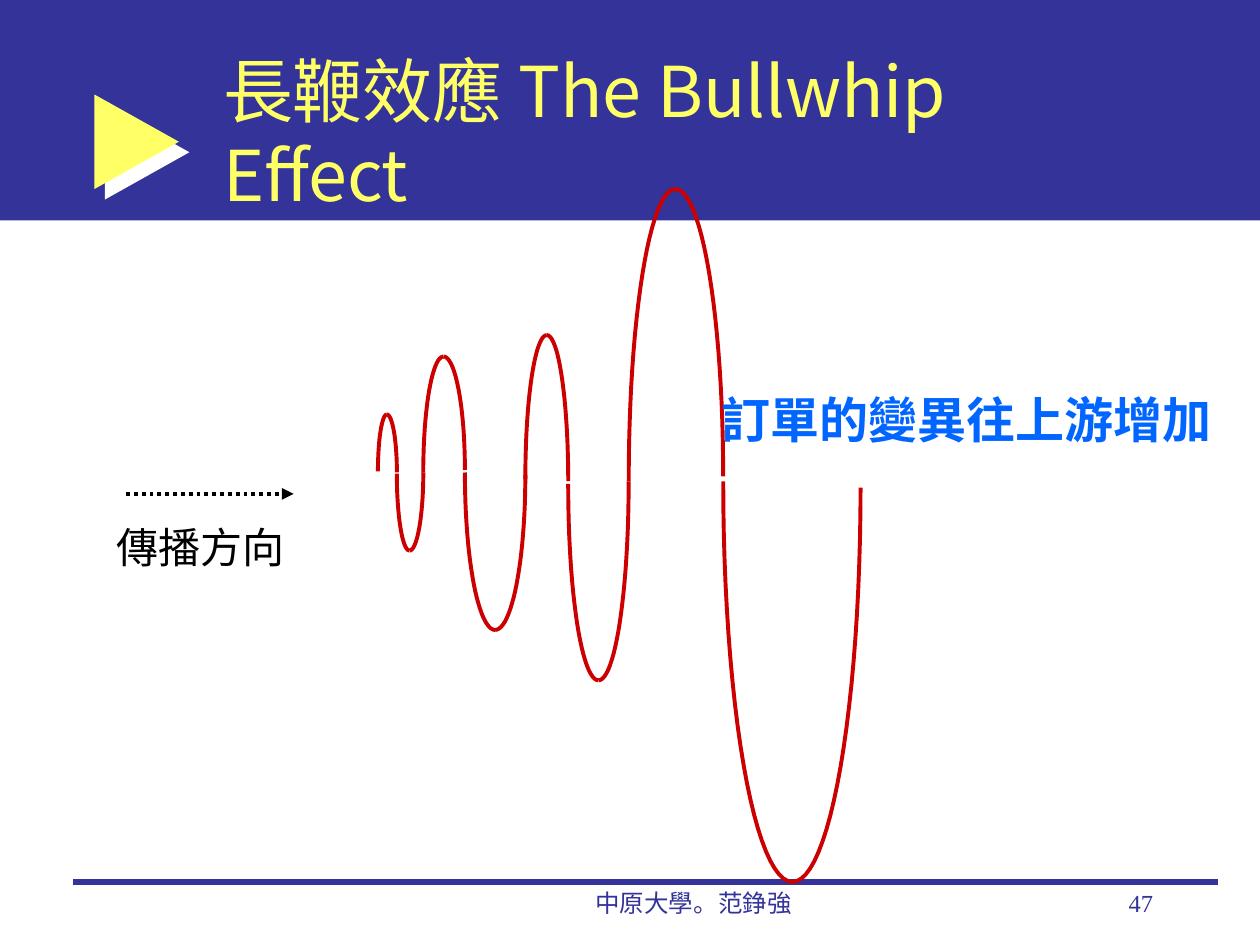
"""Build the bullwhip effect slide with its growing order wave."""
from math import cos, pi, sin

from lxml.etree import SubElement
from pptx import Presentation
from pptx.dml.color import RGBColor
from pptx.enum.dml import MSO_LINE
from pptx.enum.shapes import MSO_CONNECTOR, MSO_SHAPE
from pptx.enum.text import MSO_ANCHOR, MSO_AUTO_SIZE, PP_ALIGN
from pptx.oxml import parse_xml
from pptx.oxml.ns import nsdecls, qn
from pptx.util import Inches, Pt

color = RGBColor.from_string

NAVY, YELLOW, RED = "333399", "FFFF66", "CC0000"


def add_line(x1, x2, y, hex_color, width):
    line = slide.shapes.add_connector(
        MSO_CONNECTOR.STRAIGHT, Inches(x1), Inches(y), Inches(x2), Inches(y))
    line.line.color.rgb = color(hex_color)
    line.line.width = Pt(width)
    SubElement(line._element.spPr, qn("a:effectLst"))
    return line


prs = Presentation()
prs.slide_width, prs.slide_height = Inches(10), Inches(7.5)
slide = prs.slides.add_slide(prs.slide_layouts[5])

band = slide.shapes.add_shape(MSO_SHAPE.RECTANGLE, 0, 0, Inches(10), Inches(1.75))
marker = slide.shapes.add_shape(
    MSO_SHAPE.RIGHT_ARROW, Inches(0.75), Inches(0.75), Inches(0.67), Inches(0.75))
marker.adjustments[0], marker.adjustments[1] = 0.38, 1
for shape, fill in ((band, NAVY), (marker, YELLOW)):
    shape.fill.solid()
    shape.fill.fore_color.rgb = color(fill)
    shape.line.fill.background()
    shape.shadow.inherit = False
marker._element.spPr.find(qn("a:effectLst")).append(parse_xml(
    f'<a:outerShdw {nsdecls("a")} dist="{Pt(8.5)}" dir="2700000" algn="ctr" rotWithShape="0">'
    '<a:srgbClr val="FFFFFF"/></a:outerShdw>'))

add_line(0.58, 9.67, 7, NAVY, 3)

title = slide.shapes.title
slide.shapes._spTree.append(title._element)
title.left, title.top, title.width, title.height = (
    Inches(1.67), Inches(0.42), Inches(7.58), Inches(1.25))
title.text_frame.text = "長鞭效應 The Bullwhip Effect"
title.text_frame.auto_size = MSO_AUTO_SIZE.NONE
title.text_frame.vertical_anchor = MSO_ANCHOR.MIDDLE
title.text_frame.margin_right = Inches(0.4)
heading = title.text_frame.paragraphs[0]
heading.alignment = PP_ALIGN.LEFT
heading.font.name = "Noto Sans CJK SC"
heading.font.size = Pt(40)
heading.font.color.rgb = color(YELLOW)

# left, crest x, right, crest y, left base, right base
wave_groups = (
    ((3, 3.07, 3.15, 3.29, 3.74, 3.75),
     (3.15, 3.25, 3.36, 4.37, 3.76, 3.75),
     (3.36, 3.52, 3.69, 2.83, 3.75, 3.73),
     (3.69, 3.93, 4.17, 5, 3.75, 3.77)),
    ((4.17, 4.34, 4.51, 2.66, 3.8, 3.82),
     (4.51, 4.75, 4.99, 5.4, 3.84, 3.82),
     (4.99, 5.36, 5.74, 1.5, 3.82, 3.78),
     (5.74, 6.29, 6.83, 7, 3.82, 3.87)),
)
STEPS = 24
for half_waves in wave_groups:
    wave = slide.shapes.add_group_shape()
    for left, crest_x, right, crest_y, left_base, right_base in half_waves:
        for end_x, base in ((right, right_base), (left, left_base)):
            angles = [pi / 2 * step / STEPS for step in range(STEPS + 1)]
            points = [(Inches(crest_x + (end_x - crest_x) * sin(angle)),
                       Inches(base + (crest_y - base) * cos(angle))) for angle in angles]
            builder = wave.shapes.build_freeform(*points[0])
            builder.add_line_segments(points[1:], close=False)
            quarter = builder.convert_to_shape()
            quarter.fill.background()
            quarter.line.color.rgb = color(RED)
            quarter.line.width = Pt(2.25)
            quarter.shadow.inherit = False

direction = add_line(1, 2.33, 3.92, "000000", 2.25)
direction.line.dash_style = MSO_LINE.ROUND_DOT
SubElement(direction.line._get_or_add_ln(), qn("a:tailEnd"), type="triangle")

labels = (
    ("中原大學。范錚強", 3.92, 7, 3.17, 0.5, 14, NAVY, False, PP_ALIGN.CENTER, True),
    ("47", 7.17, 7, 2.08, 0.5, 14, NAVY, False, PP_ALIGN.RIGHT, True),
    ("傳播方向", 0.83, 4.09, 1.53, 0.5, 24, "000000", False, PP_ALIGN.LEFT, False),
    ("訂單的變異往上游增加", 5.63, 3.04, 4.09, 0.57, 28, "0066FF", True, PP_ALIGN.LEFT, False),
)
for text, left, top, width, height, size, hex_color, bold, align, wrap in labels:
    frame = slide.shapes.add_textbox(
        Inches(left), Inches(top), Inches(width), Inches(height)).text_frame
    frame.word_wrap = wrap
    frame.auto_size = MSO_AUTO_SIZE.NONE if wrap else MSO_AUTO_SIZE.SHAPE_TO_FIT_TEXT
    frame.text = text
    label = frame.paragraphs[0]
    label.alignment = align
    label.font.name = "Times New Roman"
    label.font.size = Pt(size)
    label.font.bold = bold
    label.font.color.rgb = color(hex_color)

prs.save("out.pptx")
